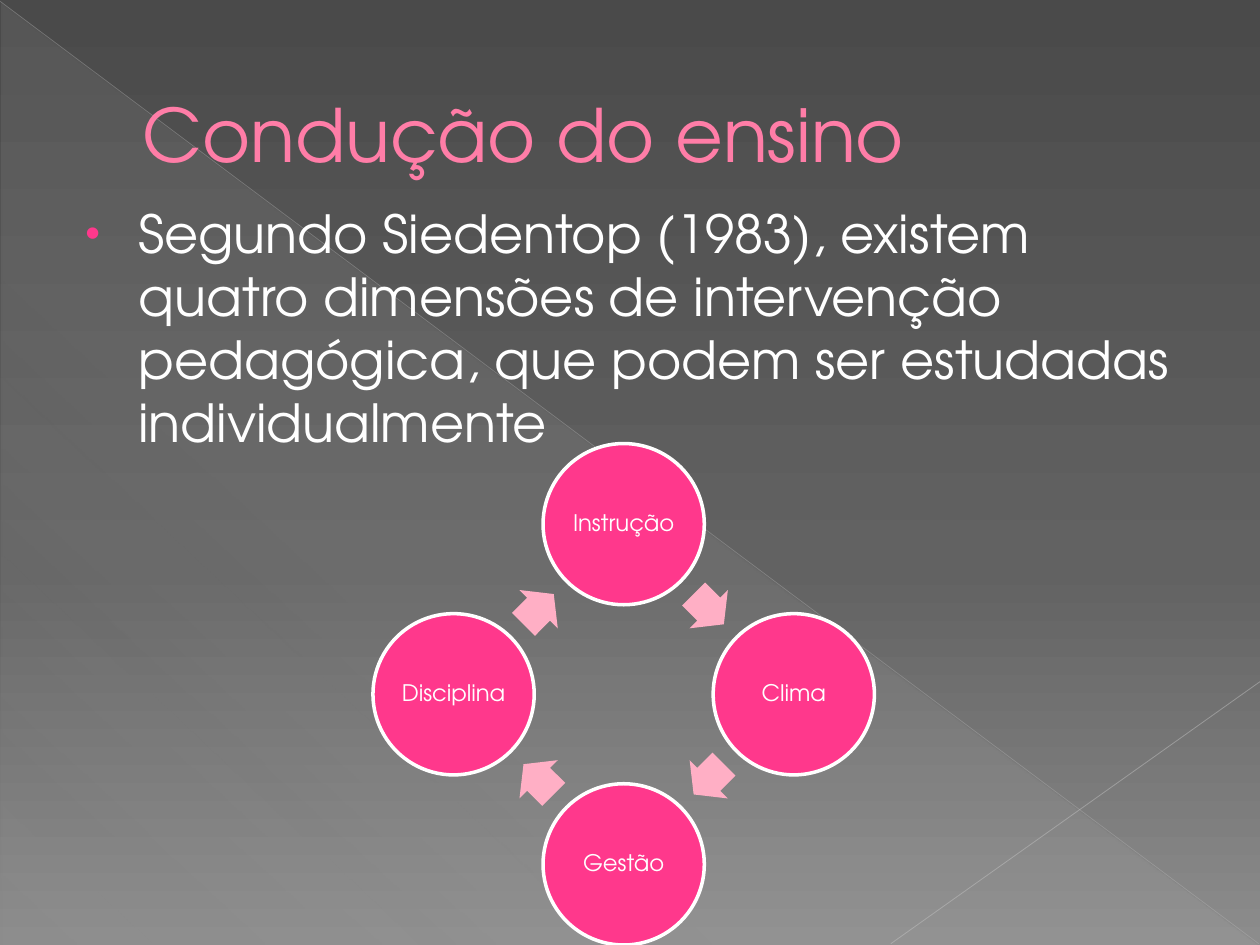
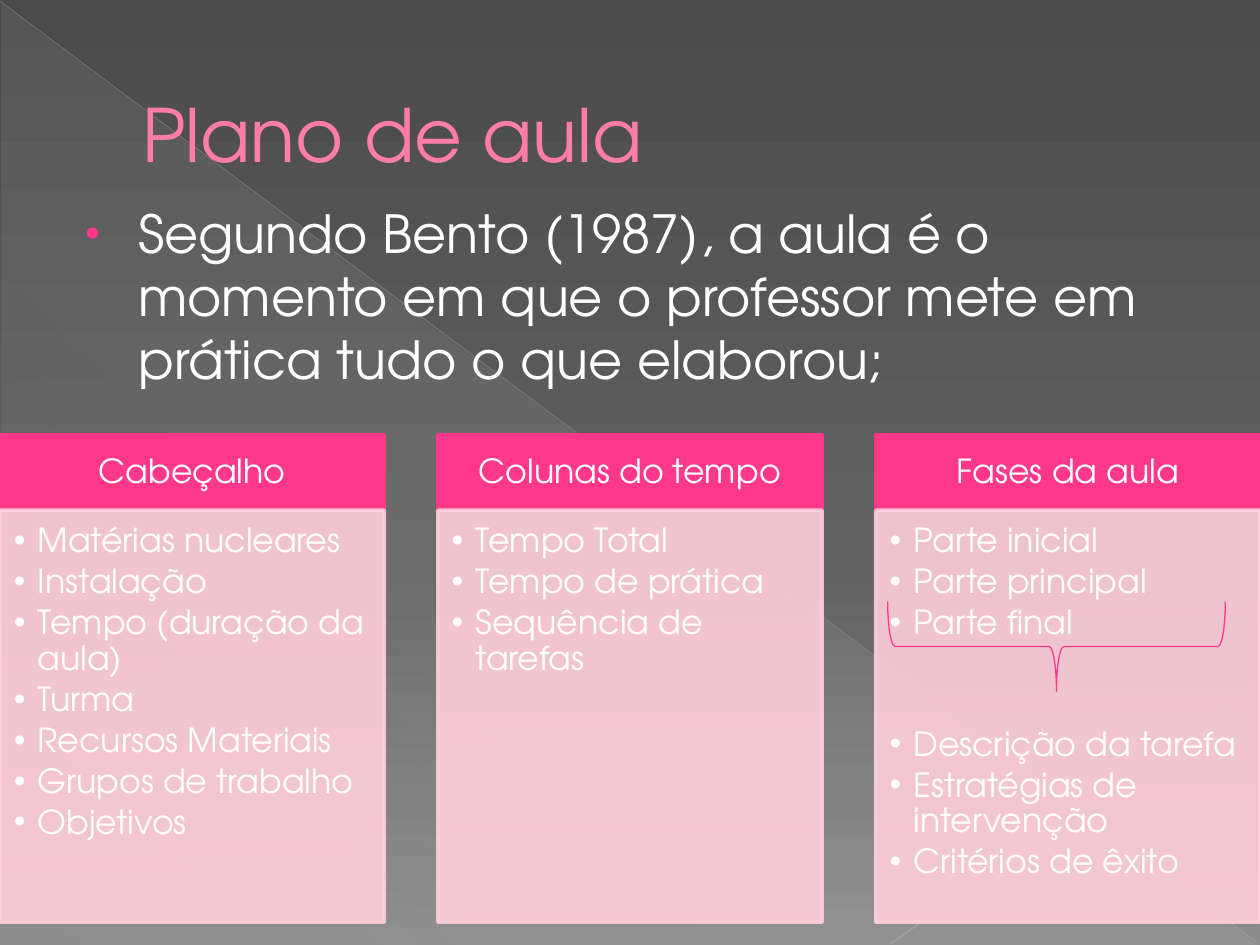
from math import cos, radians, sin

from lxml.etree import SubElement
from pptx import Presentation
from pptx.dml.color import RGBColor
from pptx.enum.shapes import MSO_CONNECTOR, MSO_SHAPE
from pptx.enum.text import MSO_ANCHOR, MSO_AUTO_SIZE, PP_ALIGN
from pptx.oxml.ns import qn
from pptx.util import Inches, Pt

CYCLE_TITLE = "Condução do ensino"
CYCLE_INTRO = ("Segundo Siedentop (1983), existem quatro dimensões de intervenção "
               "pedagógica, que podem ser estudadas individualmente")
DIMENSIONS = ["Instrução", "Clima", "Gestão", "Disciplina"]  # clockwise from the top

PLAN_TITLE = "Plano de aula"
PLAN_INTRO = ("Segundo Bento (1987), a aula é o momento em que o professor mete em "
              "prática tudo o que elaborou;")
# Each column: heading, then groups of items kept apart by a gap
PLAN_COLUMNS = [
    ("Cabeçalho", [["Matérias nucleares", "Instalação", "Tempo (duração da aula)", "Turma",
                    "Recursos Materiais", "Grupos de trabalho", "Objetivos"]]),
    ("Colunas do tempo", [["Tempo Total", "Tempo de prática", "Sequência de tarefas"]]),
    ("Fases da aula", [["Parte inicial", "Parte principal", "Parte final"],
                       ["Descrição da tarefa", "Estratégias de intervenção",
                        "Critérios de êxito"]]),
]

FONT = "TeX Gyre Adventor"
COLORS = {
    "title": "FF7DA7", "title_edge": "B12761", "text": "FFFFFF",
    "accent": "FF388C", "arrow": "FFAFC5", "panel": "FFCEDA",
    "ray": "D2D2D2", "diagonal": "BFBFBF", "corner": "C6C6C6",
}
BACKDROP = [(0, "4A4A4A", 100), (60, "626262", 100), (100, "8C8C8C", 100)]
RAY = [(0, COLORS["ray"], 10), (70, COLORS["ray"], 8), (100, COLORS["ray"], 1)]
WIDTH, HEIGHT = 10, 7.5


def paint(fill, color, opacity=100):
    fill.solid()
    fill.fore_color.rgb = RGBColor.from_string(color)
    if opacity < 100:
        # The colour element just written is the only one without an alpha child
        clr = fill._xPr.find(qn("a:solidFill")).find(qn("a:srgbClr"))
        SubElement(clr, qn("a:alpha"), val=str(opacity * 1000))


def paint_gradient(fill, owner, stops, angle):
    """Fill with (position, colour, opacity) stops; owner is the element that holds the fill."""
    fill.gradient()
    gradient = owner.find(".//" + qn("a:gradFill"))
    gradient.find(qn("a:lin")).set("ang", str(angle * 60000))
    stop_list = gradient.find(qn("a:gsLst"))
    for old_stop in list(stop_list):
        stop_list.remove(old_stop)
    for position, color, opacity in stops:
        stop = SubElement(stop_list, qn("a:gs"), pos=str(position * 1000))
        clr = SubElement(stop, qn("a:srgbClr"), val=color)
        SubElement(clr, qn("a:alpha"), val=str(opacity * 1000))


def outline(line, color, width, opacity=100):
    line.width = Pt(width)
    paint(line.fill, color, opacity)


def add_block(slide, kind, left, top, width, height, fill=None, edge=None,
              edge_width=2, opacity=100, rotation=0):
    block = slide.shapes.add_shape(kind, Inches(left), Inches(top), Inches(width), Inches(height))
    block.shadow.inherit = False
    block.rotation = rotation
    if fill:
        paint(block.fill, fill, opacity)
    else:
        block.fill.background()
    if edge:
        outline(block.line, edge, edge_width, opacity)
    else:
        block.line.fill.background()
    return block


def add_ray_line(slide, start, end, color, width, opacity):
    ray = slide.shapes.add_connector(MSO_CONNECTOR.STRAIGHT, *map(Inches, start + end))
    outline(ray.line, color, width, opacity)
    SubElement(ray.element.spPr, qn("a:effectLst"))
    return ray


def write(shape, groups, size, color=COLORS["text"], align=PP_ALIGN.LEFT,
          anchor=MSO_ANCHOR.TOP, insets=(0.1, 0.05, 0.1, 0.05), spacing=1.0, before=0,
          after=0, group_gap=0, indent=0, hanging=0, bullet=None):
    """Write groups of paragraphs; bullet is (colour, size in percent)."""
    frame = shape.text_frame
    frame.word_wrap = True
    frame.auto_size = MSO_AUTO_SIZE.NONE
    frame.vertical_anchor = anchor
    (frame.margin_left, frame.margin_top,
     frame.margin_right, frame.margin_bottom) = map(Inches, insets)
    entries = [(text, g > 0 and i == 0)
               for g, group in enumerate(groups) for i, text in enumerate(group)]
    for number, (text, opens_group) in enumerate(entries):
        paragraph = frame.add_paragraph() if number else frame.paragraphs[0]
        paragraph.alignment = align
        paragraph.line_spacing = spacing
        paragraph.space_before = Pt(group_gap if opens_group else before)
        paragraph.space_after = Pt(after)
        run = paragraph.add_run()
        run.text = text
        run.font.name = FONT
        run.font.size = Pt(size)
        run.font.color.rgb = RGBColor.from_string(color)
        props = paragraph._p.get_or_add_pPr()
        props.set("marL", str(Inches(indent)))
        props.set("indent", str(Inches(-hanging)))
        if bullet:
            bullet_color, percent = bullet
            SubElement(SubElement(props, qn("a:buClr")), qn("a:srgbClr"), val=bullet_color)
            SubElement(props, qn("a:buSzPct"), val=str(percent * 1000))
            SubElement(props, qn("a:buFont"), typeface="Arial")
            SubElement(props, qn("a:buChar"), char="•")


def decorate_layout(layout, slide):
    """Give the layout its backdrop; the rays are drawn on a slide and moved over."""
    paint_gradient(layout.background.fill, layout.element, BACKDROP, 90)
    for placeholder in list(layout.placeholders):
        if placeholder.placeholder_format.idx:
            placeholder.element.getparent().remove(placeholder.element)
    triangle = add_block(slide, MSO_SHAPE.RIGHT_TRIANGLE, 0.01, 0.02, WIDTH - 0.02, HEIGHT - 0.02)
    paint_gradient(triangle.fill, triangle.element, RAY, 133)
    rays = [
        triangle,
        add_ray_line(slide, (0, 0.01), (9.99, 7.49), COLORS["diagonal"], 0.39, 35),
        add_ray_line(slide, (WIDTH, 5.41), (7.07, 7.49), COLORS["corner"], 0.47, 45),
    ]
    for depth, ray in enumerate(rays, start=2):
        layout.shapes.element.insert(depth, ray.element)


def fill_heading(slide, heading, intro, intro_height):
    title = slide.shapes.title
    title.left, title.top, title.width, title.height = map(Inches, (0.5, 0.29, 9, 1.53))
    write(title, [[heading]], 42, color=COLORS["title"], anchor=MSO_ANCHOR.MIDDLE, indent=0.53)
    run_props = title.text_frame.paragraphs[0].runs[0].font._element
    edge = run_props.makeelement(qn("a:ln"), {"w": str(Pt(0.5))})
    SubElement(SubElement(edge, qn("a:solidFill")), qn("a:srgbClr"), val=COLORS["title_edge"])
    run_props.insert(0, edge)

    body = slide.shapes.add_textbox(*map(Inches, (0.51, 1.55, 9, intro_height)))
    write(body, [[intro]], 30, before=6, indent=0.49, hanging=0.42,
          bullet=(COLORS["accent"], 80))


def draw_cycle(slide):
    center_x, center_y, radius = 4.95, 5.51, 1.35
    disc, arrow_width, arrow_height = 1.28, 0.34, 0.43
    step = 360 / len(DIMENSIONS)

    def place(angle, distance, width, height):
        return (center_x + distance * sin(radians(angle)) - width / 2,
                center_y - distance * cos(radians(angle)) - height / 2, width, height)

    for number, dimension in enumerate(DIMENSIONS):
        angle = number * step
        circle = add_block(slide, MSO_SHAPE.OVAL, *place(angle, radius, disc, disc),
                           fill=COLORS["accent"], edge=COLORS["text"])
        write(circle, [[dimension]], 13, align=PP_ALIGN.CENTER, anchor=MSO_ANCHOR.MIDDLE,
              insets=(0.02,) * 4, spacing=0.9)
        halfway = angle + step / 2
        arrow = add_block(slide, MSO_SHAPE.RIGHT_ARROW,
                          *place(halfway, radius * cos(radians(step / 2)),
                                 arrow_width, arrow_height),
                          fill=COLORS["arrow"], rotation=halfway)
        arrow.adjustments[0], arrow.adjustments[1] = 0.6, 0.5


def draw_plan(slide):
    top, header_height, panel_height, column_width = 3.45, 0.6, 3.27, 3.05
    pitch = (WIDTH - column_width) / (len(PLAN_COLUMNS) - 1)
    for number, (heading, groups) in enumerate(PLAN_COLUMNS):
        left = number * pitch
        header = add_block(slide, MSO_SHAPE.RECTANGLE, left, top, column_width, header_height,
                           fill=COLORS["accent"], edge=COLORS["accent"])
        write(header, [[heading]], 19, align=PP_ALIGN.CENTER, anchor=MSO_ANCHOR.MIDDLE,
              insets=(0.15, 0.08, 0.15, 0.08), spacing=0.9)
        panel = add_block(slide, MSO_SHAPE.RECTANGLE, left, top + header_height, column_width,
                          panel_height, fill=COLORS["panel"], edge=COLORS["panel"], opacity=90)
        write(panel, groups, 19, insets=(0.11, 0.11, 0.15, 0.17), spacing=0.9, after=2.85,
              group_gap=46, indent=0.19, hanging=0.19, bullet=(COLORS["text"], 100))
    add_block(slide, MSO_SHAPE.LEFT_BRACE, 8.03, 3.79, 0.71, 2.68,
              edge=COLORS["accent"], edge_width=0.75, rotation=270)


def main():
    deck = Presentation()
    deck.slide_width, deck.slide_height = Inches(WIDTH), Inches(HEIGHT)
    title_only = deck.slide_layouts[5]

    cycle = deck.slides.add_slide(title_only)
    decorate_layout(title_only, cycle)
    fill_heading(cycle, CYCLE_TITLE, CYCLE_INTRO, 2.4)
    draw_cycle(cycle)

    plan = deck.slides.add_slide(title_only)
    fill_heading(plan, PLAN_TITLE, PLAN_INTRO, 5.95)
    draw_plan(plan)

    deck.save("out.pptx")


if __name__ == "__main__":
    main()
